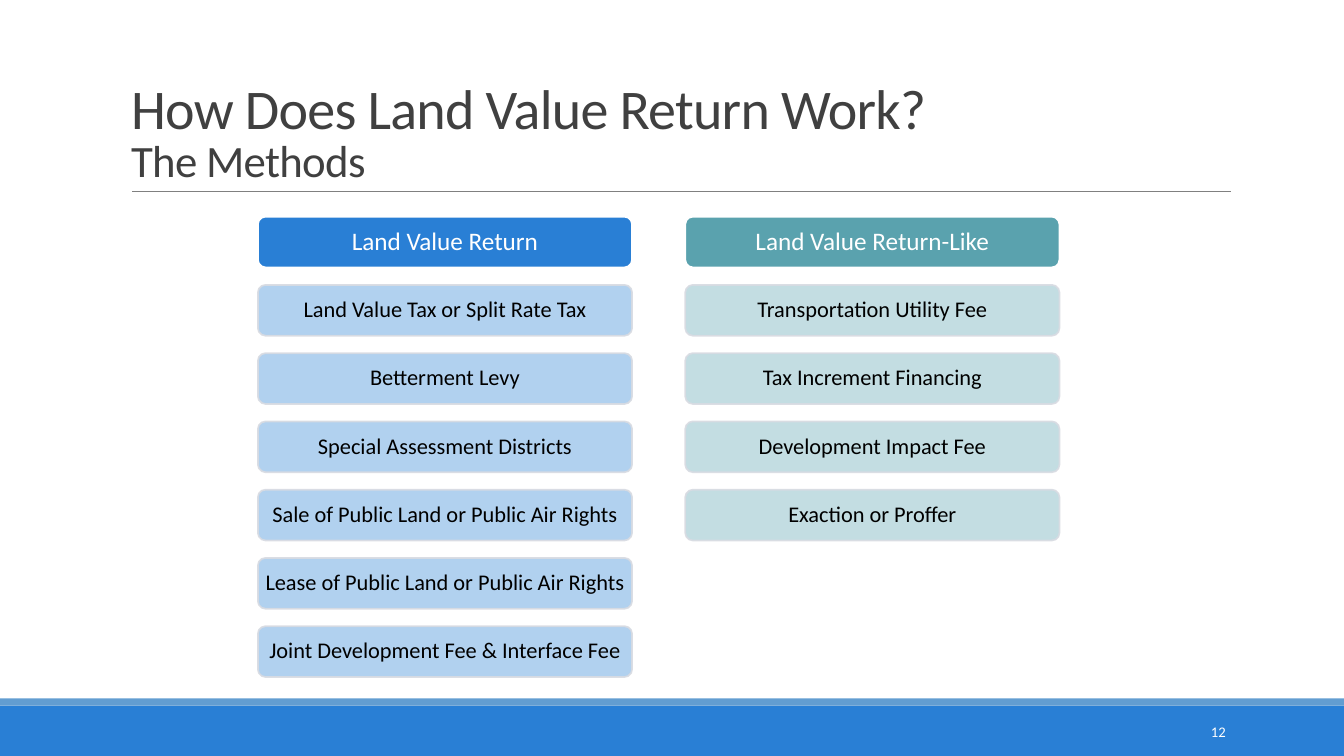
from copy import deepcopy

from lxml import etree
from pptx import Presentation
from pptx import util as u
from pptx.dml import color
from pptx.enum import shapes, text
from pptx.oxml import ns

BLUE, WHITE, BLACK = "297FD5", "FFFFFF", "000000"

# Card grid, in centimetres
CARD_TOP, CARD_PITCH = 5.46, 1.72
CARD_WIDTH, CARD_HEIGHT = 9.43, 1.28

COLUMNS = [
    {"left": 6.5, "header": "Land Value Return", "header_fill": BLUE,
     "card_fill": "A9CCEE",
     "methods": ["Land Value Tax or Split Rate Tax", "Betterment Levy",
                 "Special Assessment Districts",
                 "Sale of Public Land or Public Air Rights",
                 "Lease of Public Land or Public Air Rights",
                 "Joint Development Fee & Interface Fee"]},
    {"left": 17.27, "header": "Land Value Return-Like", "header_fill": "5AA2AE",
     "card_fill": "BDDADF",
     "methods": ["Transportation Utility Fee", "Tax Increment Financing",
                 "Development Impact Fee", "Exaction or Proffer"]},
]


def rgb(value):
    return color.RGBColor.from_string(value)


def apply(target, values):
    for name, value in values.items():
        setattr(target, name, value)


def set_alpha(fill_parent, percent):
    """Make the solid fill under an element partly transparent."""
    colour = fill_parent.find(ns.qn("a:solidFill"))[0]
    etree.SubElement(colour, ns.qn("a:alpha"), val=str(percent * 1000))


class SlideBuilder:
    font_name = "Calibri"

    def __init__(self, presentation, layout):
        self.slide = presentation.slides.add_slide(layout)

    def run(self, paragraph, content, size, colour):
        run = paragraph.add_run()
        run.text = content
        apply(run.font, {"name": self.font_name, "size": u.Pt(size)})
        run.font.color.rgb = rgb(colour)
        return run

    def title(self, box, heading, subtitle, colour):
        shape = self.slide.shapes.title
        apply(shape, dict(zip(("left", "top", "width", "height"), map(u.Cm, box))))
        apply(shape.text_frame, {"vertical_anchor": text.MSO_ANCHOR.BOTTOM,
                                 "auto_size": text.MSO_AUTO_SIZE.NONE,
                                 "word_wrap": True})
        paragraph = shape.text_frame.paragraphs[0]
        apply(paragraph, {"alignment": text.PP_ALIGN.LEFT, "line_spacing": 0.85})
        first = self.run(paragraph, heading, 40, colour)
        first.font._element.set("spc", "-50")
        # The break keeps the heading size, so the first line keeps its height
        paragraph.add_line_break()
        paragraph._p[-1].append(deepcopy(first.font._element))
        second = self.run(paragraph, subtitle, 32, colour)
        second.font._element.set("spc", "-50")

    def bar(self, box, fill, kind=shapes.MSO_SHAPE.RECTANGLE):
        shape = self.slide.shapes.add_shape(kind, *map(u.Cm, box))
        shape.shadow.inherit = False
        shape.fill.solid()
        shape.fill.fore_color.rgb = rgb(fill)
        shape.line.fill.background()
        return shape

    def rule(self, left, right, top, colour):
        line = self.slide.shapes.add_connector(
            shapes.MSO_CONNECTOR.STRAIGHT, *map(u.Cm, (left, top, right, top)))
        line.line.color.rgb = rgb(colour)
        line.line.width = u.Pt(0.5)
        etree.SubElement(line._element.spPr, ns.qn("a:effectLst"))

    def card(self, box, content, size, fill, line, colour, alpha=None):
        shape = self.bar(box, fill, shapes.MSO_SHAPE.ROUNDED_RECTANGLE)
        shape.adjustments[0] = 0.15
        shape.line.color.rgb = rgb(line)
        shape.line.width = u.Pt(1.25)
        if alpha:
            set_alpha(shape._element.spPr, alpha)
            set_alpha(shape.line._ln, alpha)
        frame = shape.text_frame
        apply(frame, {"vertical_anchor": text.MSO_ANCHOR.MIDDLE, "word_wrap": True})
        apply(frame, {f"margin_{side}": u.Cm(0.08)
                      for side in ("left", "right", "top", "bottom")})
        paragraph = frame.paragraphs[0]
        apply(paragraph, {"alignment": text.PP_ALIGN.CENTER, "line_spacing": 0.9})
        self.run(paragraph, content, size, colour)

    def label(self, box, content, size, colour):
        frame = self.slide.shapes.add_textbox(*map(u.Cm, box)).text_frame
        apply(frame, {"vertical_anchor": text.MSO_ANCHOR.MIDDLE, "word_wrap": True})
        frame.paragraphs[0].alignment = text.PP_ALIGN.RIGHT
        self.run(frame.paragraphs[0], content, size, colour)


def main():
    presentation = Presentation()
    apply(presentation, {"slide_width": u.Cm(33.87), "slide_height": u.Cm(19.05)})
    builder = SlideBuilder(presentation, presentation.slide_layouts[5])

    # Footer bands and title
    builder.bar((0, 17.78, 33.87, 1.27), BLUE)
    builder.bar((0, 17.6, 33.87, 0.18), "629DD1")
    builder.rule(3.33, 31.01, 4.83, "808080")
    builder.title((3.05, 0.79, 27.94, 4.04), "How Does Land Value Return Work?",
                  "The Methods", "404040")

    # Two columns of methods, each under its header
    for column in COLUMNS:
        left = column["left"]
        builder.card((left, CARD_TOP, CARD_WIDTH, CARD_HEIGHT), column["header"],
                     18, column["header_fill"], WHITE, WHITE)
        for row, method in enumerate(column["methods"], start=1):
            top = CARD_TOP + row * CARD_PITCH
            builder.card((left, top, CARD_WIDTH, CARD_HEIGHT), method,
                         16, column["card_fill"], "D8DBE2", BLACK, alpha=90)

    # Slide number
    builder.label((27.51, 17.93, 3.63, 1.02), "12", 10.5, WHITE)

    presentation.save("out.pptx")


if __name__ == "__main__":
    main()
